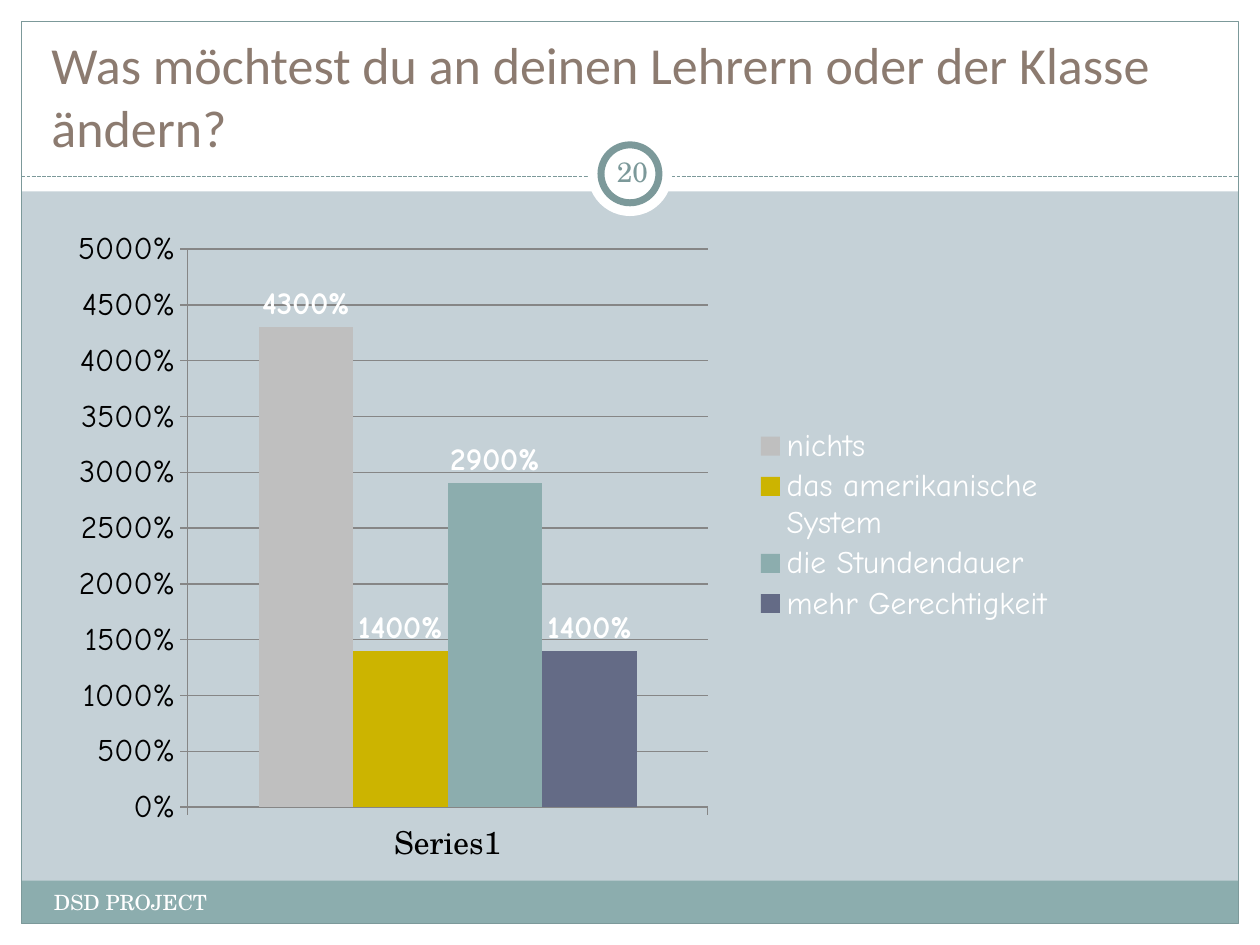
from lxml import etree
from pptx import Presentation
from pptx.chart.data import CategoryChartData
from pptx.dml.color import RGBColor
from pptx.enum import chart as ch, dml, shapes, text
from pptx.oxml import parse_xml
from pptx.oxml.ns import nsdecls, qn
from pptx.util import Inches, Pt

# Content
TITLE = "Was möchtest du an deinen Lehrern oder der Klasse ändern?"
FOOTER = "DSD PROJECT"
PAGE_NUMBER = "20"
CATEGORY = "Series1"
ANSWERS = [  # name, value, colour
    ("nichts", 43, "BFBFBF"),
    ("das amerikanische System", 14, "CCB400"),
    ("die Stundendauer", 29, "8CADAE"),
    ("mehr Gerechtigkeit", 14, "646B86"),
]

THEME = {
    "background": "C5D1D7", "white": "FFFFFF", "band": "8CADAE",
    "line": "7C999A", "title": "8C7B70", "black": "000000", "axis": "868686",
    "title_font": "Calibri", "body_font": "TeX Gyre Schola", "chart_font": "Comic Neue",
    "title_size": 29.7, "chart_size": 18, "number_size": 16, "footer_size": 12,
}

# Geometry in inches
WIDTH, HEIGHT, MARGIN = 10, 7.5, 0.17
HEADER_HEIGHT, RULE_TOP, BAND_TOP, BAND_HEIGHT = 1.52, 1.4, 6.99, 0.34
BADGE_CENTER = (5, 1.38)
CHART_BOX = (0.62, 1.72, 7.8, 5.15)
PLOT_LAYOUT = (0.11, 0.05, 0.53, 0.86)
LEGEND_LAYOUT = (0.68, 0.32, 0.32, 0.31)


def color(name):
    return RGBColor.from_string(THEME.get(name, name))


def set_font(font, **values):
    font.color.rgb = color(values.pop("color"))
    for key, value in values.items():
        setattr(font, key, value)


def add_shape(slide, kind, box, fill=None, line=None, width=0.75):
    shape = slide.shapes.add_shape(kind, *map(Inches, box))
    shape.shadow.inherit = False
    if fill:
        shape.fill.solid()
        shape.fill.fore_color.rgb = color(fill)
    else:
        shape.fill.background()
    if line:
        shape.line.color.rgb = color(line)
        shape.line.width = Pt(width)
    else:
        shape.line.fill.background()
    return shape


def add_text(slide, box, content, font, frame_format=None, alignment=None):
    frame = slide.shapes.add_textbox(*map(Inches, box)).text_frame
    for key, value in {"word_wrap": True, **(frame_format or {})}.items():
        setattr(frame, key, value)
    paragraph = frame.paragraphs[0]
    paragraph.alignment = alignment
    run = paragraph.add_run()
    run.text = content
    set_font(run.font, **font)


def set_layout(element, values, inner=False):
    """Place a chart part by fractions of the chart area."""
    for old in element.findall(qn("c:layout")):
        element.remove(old)
    layout = parse_xml(f"<c:layout {nsdecls('c')}><c:manualLayout/></c:layout>")
    settings = [("layoutTarget", "inner")] if inner else []
    settings += [("xMode", "edge"), ("yMode", "edge"), *zip("xywh", values)]
    for tag, value in settings:
        etree.SubElement(layout[0], qn(f"c:{tag}")).set("val", str(value))
    position = element.find(qn("c:legendPos"))
    element.insert(0 if position is None else 1, layout)


def add_frame(slide):
    # White margins
    for box in [(0, HEIGHT - MARGIN, WIDTH, MARGIN), (0, 0, WIDTH, HEADER_HEIGHT),
                (0, 0, MARGIN, HEIGHT), (WIDTH - MARGIN, 0, MARGIN, HEIGHT)]:
        add_shape(slide, shapes.MSO_SHAPE.RECTANGLE, box, "white")
    # Footer band and border
    inner_width = WIDTH - 2 * MARGIN
    add_shape(slide, shapes.MSO_SHAPE.RECTANGLE,
              (MARGIN, BAND_TOP, inner_width, BAND_HEIGHT), "band")
    add_shape(slide, shapes.MSO_SHAPE.RECTANGLE,
              (MARGIN, MARGIN, inner_width, HEIGHT - 2 * MARGIN), line="line")
    # Dashed rule
    rule = slide.shapes.add_connector(
        shapes.MSO_CONNECTOR.STRAIGHT,
        *map(Inches, (MARGIN, RULE_TOP, WIDTH - MARGIN, RULE_TOP)))
    rule.line.color.rgb = color("line")
    rule.line.width = Pt(0.75)
    rule.line.dash_style = dml.MSO_LINE.SQUARE_DOT
    etree.SubElement(rule._element.spPr, qn("a:effectLst"))
    # Number badge
    for size, line in [(0.67, None), (0.46, "line")]:
        left, top = (center - size / 2 for center in BADGE_CENTER)
        add_shape(slide, shapes.MSO_SHAPE.OVAL, (left, top, size, size), "white", line, 4)


def add_answer_chart(slide):
    data = CategoryChartData(number_format="0%")
    data.categories = [CATEGORY]
    for name, value, _ in ANSWERS:
        data.add_series(name, [value])
    chart = slide.shapes.add_chart(
        ch.XL_CHART_TYPE.COLUMN_CLUSTERED, *map(Inches, CHART_BOX), data).chart
    size = Pt(THEME["chart_size"])
    set_font(chart.font, color="black", size=size, name=THEME["body_font"])
    chart.has_title = False

    # Axes
    value_axis, category_axis = chart.value_axis, chart.category_axis
    value_axis.minimum_scale, value_axis.maximum_scale, value_axis.major_unit = 0, 50, 5
    value_axis.has_major_gridlines = True
    value_axis.tick_labels.number_format = "0%"
    value_axis.tick_labels.number_format_is_linked = False
    set_font(value_axis.tick_labels.font, color="black", size=size, name=THEME["chart_font"])
    for axis in (value_axis, category_axis):
        axis.major_tick_mark = ch.XL_TICK_MARK.OUTSIDE
    for part in (value_axis, category_axis, value_axis.major_gridlines):
        part.format.line.color.rgb = color("axis")
        part.format.line.width = Pt(0.75)

    # Columns and their labels
    plot = chart.plots[0]
    plot.gap_width, plot.overlap, plot.vary_by_categories = 150, 0, False
    for series, (_, _, fill) in zip(plot.series, ANSWERS):
        series.format.fill.solid()
        series.format.fill.fore_color.rgb = color(fill)
        labels = series.data_labels
        for key, value in {"show_value": True, "number_format": "0%",
                           "number_format_is_linked": False,
                           "position": ch.XL_LABEL_POSITION.OUTSIDE_END}.items():
            setattr(labels, key, value)
        set_font(labels.font, color="white", size=size, bold=True, name=THEME["chart_font"])

    # Legend and placement
    chart.has_legend = True
    chart.legend.position = ch.XL_LEGEND_POSITION.RIGHT
    chart.legend.include_in_layout = False
    set_font(chart.legend.font, color="white", size=size, name=THEME["chart_font"])
    set_layout(chart.legend._element, LEGEND_LAYOUT)
    set_layout(chart._chartSpace.chart.plotArea, PLOT_LAYOUT, inner=True)


def main():
    presentation = Presentation()
    presentation.slide_width, presentation.slide_height = Inches(WIDTH), Inches(HEIGHT)
    slide = presentation.slides.add_slide(presentation.slide_layouts[6])
    slide.background.fill.solid()
    slide.background.fill.fore_color.rgb = color("background")
    add_frame(slide)

    # Title, footer and page number
    add_text(slide, (0.31, 0.47, 9.33, 0.83), TITLE,
             {"color": "title", "size": Pt(THEME["title_size"]), "name": THEME["title_font"]},
             {"vertical_anchor": text.MSO_ANCHOR.BOTTOM})
    add_text(slide, (0.33, 7.01, 3.92, 0.4), FOOTER,
             {"color": "white", "size": Pt(THEME["footer_size"]), "name": THEME["body_font"]})
    insets = {f"margin_{side}": Inches(0.05) for side in ("left", "right", "top", "bottom")}
    add_text(slide, (4.77, 1.12, 0.5, 0.48), PAGE_NUMBER,
             {"color": "line", "size": Pt(THEME["number_size"]), "name": THEME["body_font"]},
             {"vertical_anchor": text.MSO_ANCHOR.MIDDLE, **insets}, text.PP_ALIGN.CENTER)

    add_answer_chart(slide)
    presentation.save("out.pptx")


if __name__ == "__main__":
    main()
